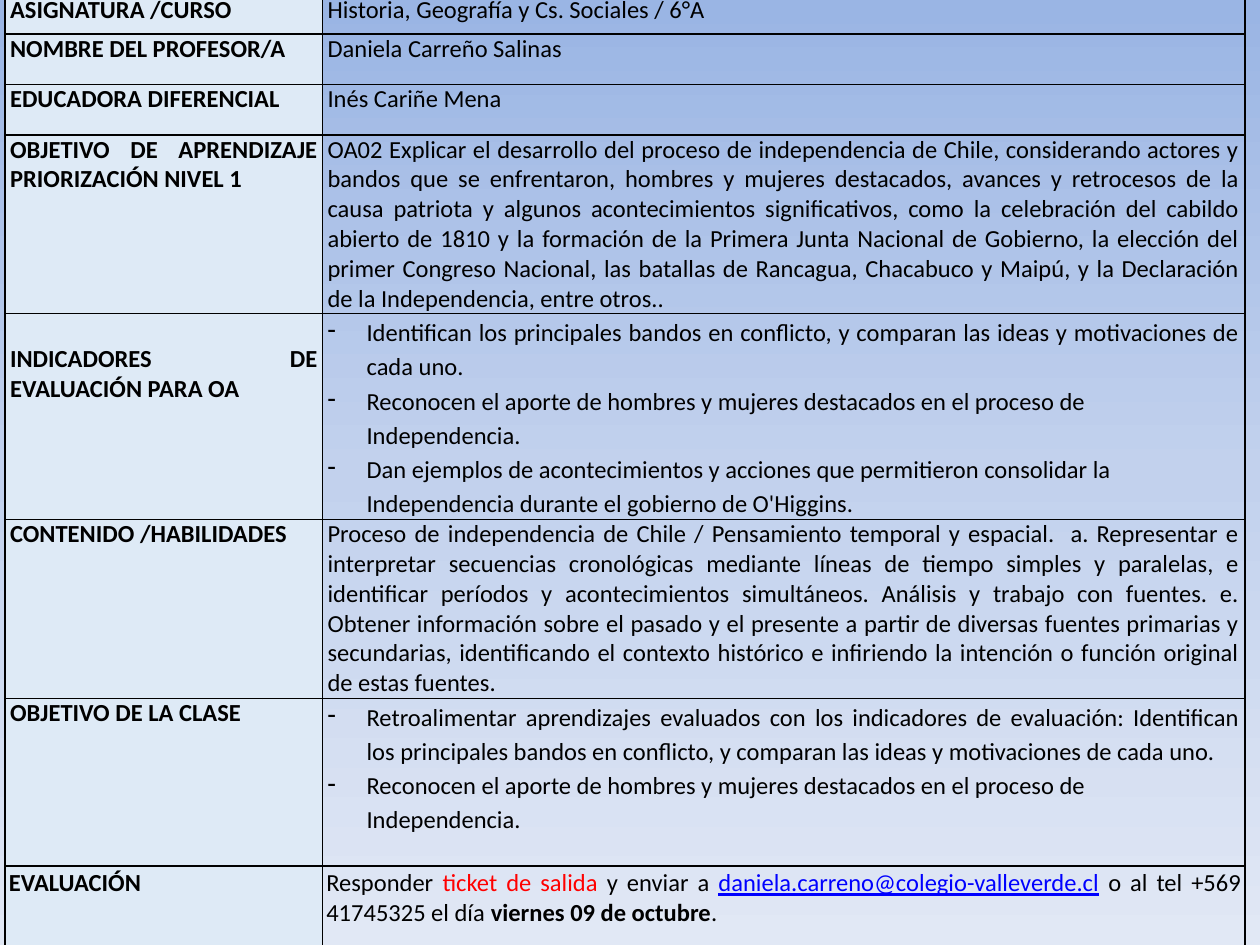
from copy import deepcopy

from lxml.etree import SubElement
from pptx import Presentation
from pptx.dml.color import RGBColor
from pptx.enum.text import PP_ALIGN
from pptx.oxml.ns import qn
from pptx.util import Inches, Pt

COLORS = {
    "text": "000000",
    "accent": "FF0000",
    "email": "0000FF",
    "label": "DEEAF6",
    "border": "000000",
}
BACKGROUND_STOPS = [(0, "9AB5E4"), (0.5, "C2D1ED"), (1, "E1E8F5")]
COLUMN_WIDTHS = [2.52, 7.32]
HERO_CONTRIBUTION = (
    "Reconocen el aporte de hombres y mujeres destacados en el proceso de Independencia."
)
SIDES_COMPARISON = (
    "Identifican los principales bandos en conflicto, y comparan las ideas y "
    "motivaciones de cada uno."
)
ROWS = [
    (0.31, "ASIGNATURA /CURSO", "Historia, Geografía y Cs. Sociales / 6°A"),
    (0.4, "NOMBRE DEL PROFESOR/A", "Daniela Carreño Salinas"),
    (0.4, "EDUCADORA DIFERENCIAL", "Inés Cariñe Mena"),
    (1.42, "OBJETIVO DE APRENDIZAJE PRIORIZACIÓN NIVEL 1",
     "OA02 Explicar el desarrollo del proceso de independencia de Chile, considerando "
     "actores y bandos que se enfrentaron, hombres y mujeres destacados, avances y "
     "retrocesos de la causa patriota y algunos acontecimientos significativos, como la "
     "celebración del cabildo abierto de 1810 y la formación de la Primera Junta Nacional "
     "de Gobierno, la elección del primer Congreso Nacional, las batallas de Rancagua, "
     "Chacabuco y Maipú, y la Declaración de la Independencia, entre otros.."),
    (1.63, "INDICADORES DE EVALUACIÓN PARA OA", [
        SIDES_COMPARISON,
        HERO_CONTRIBUTION,
        "Dan ejemplos de acontecimientos y acciones que permitieron consolidar la "
        "Independencia durante el gobierno de O'Higgins.",
    ]),
    (1.42, "CONTENIDO /HABILIDADES",
     "Proceso de independencia de Chile / Pensamiento temporal y espacial.  a. Representar "
     "e interpretar secuencias cronológicas mediante líneas de tiempo simples y paralelas, "
     "e identificar períodos y acontecimientos simultáneos. Análisis y trabajo con fuentes. "
     "e. Obtener información sobre el pasado y el presente a partir de diversas fuentes "
     "primarias y secundarias, identificando el contexto histórico e infiriendo la "
     "intención o función original de estas fuentes."),
    (1.33, "OBJETIVO DE LA CLASE", [
        "Retroalimentar aprendizajes evaluados con los indicadores de evaluación: "
        + SIDES_COMPARISON,
        HERO_CONTRIBUTION,
    ]),
    (0.64, "EVALUACIÓN", ""),
]
EVALUATION_RUNS = [
    ("Responder ", {}),
    ("ticket de salida ", {"color": "accent"}),
    ("y enviar a ", {}),
    ("daniela.carreno@colegio-valleverde.cl", {"color": "email", "underline": True}),
    (" o al tel +569 41745325 el día ", {}),
    ("viernes 09 de octubre", {"bold": True}),
    (".", {}),
]


def add_text(paragraph, text, color="text", bold=False, underline=False):
    """Add a formatted run to a paragraph."""
    run = paragraph.add_run()
    run.text = text
    run.font.name = "Calibri"
    run.font.size = Pt(14)
    run.font.bold = bold
    run.font.underline = underline
    run.font.color.rgb = RGBColor.from_string(COLORS[color])


def add_bullets(text_frame, items):
    """Write dashed list items, the first one justified."""
    for index, item in enumerate(items):
        paragraph = text_frame.add_paragraph() if index else text_frame.paragraphs[0]
        paragraph.alignment = PP_ALIGN.LEFT if index else PP_ALIGN.JUSTIFY
        paragraph.line_spacing = 1.15
        properties = paragraph._p.get_or_add_pPr()
        properties.set("marL", str(Inches(0.31)))
        properties.set("indent", str(-Inches(0.31)))
        SubElement(properties, qn("a:buChar"), char="-")
        add_text(paragraph, item)


def format_cell(cell, margin, top):
    """Set the margins and the four borders of a cell."""
    cell.margin_left = cell.margin_right = Inches(margin)
    cell.margin_top = Inches(top)
    cell.margin_bottom = Inches(0)
    properties = cell._tc.get_or_add_tcPr()
    for side in ("lnL", "lnR", "lnT", "lnB"):
        line = SubElement(properties, qn(f"a:{side}"), w=str(Pt(1)))
        fill = SubElement(line, qn("a:solidFill"))
        SubElement(fill, qn("a:srgbClr"), val=COLORS["border"])


def set_background(slide):
    """Give the slide a vertical gradient."""
    fill = slide.background.fill
    fill.gradient()
    fill.gradient_angle = 270
    stops = fill._fill._gradFill.gsLst
    stops.append(deepcopy(stops[-1]))
    for stop, (position, color) in zip(fill.gradient_stops, BACKGROUND_STOPS):
        stop.position = position
        stop.color.rgb = RGBColor.from_string(color)


def add_plan_table(slide):
    """Add the lesson plan table with its labels and contents."""
    frame = slide.shapes.add_table(
        len(ROWS), 2, Inches(0.04), Inches(-0.04), Inches(9.84), Inches(7.55)
    )
    table = frame.table
    table.first_row = table.horz_banding = False
    for column, width in zip(table.columns, COLUMN_WIDTHS):
        column.width = Inches(width)
    for index, (height, label, content) in enumerate(ROWS):
        table.rows[index].height = Inches(height)
        label_cell, content_cell = table.cell(index, 0), table.cell(index, 1)
        is_evaluation = label == "EVALUACIÓN"
        margin, top = (0.03, 0.02) if is_evaluation else (0.04, 0)
        format_cell(label_cell, margin, 0.24 if label.startswith("INDICADORES") else top)
        format_cell(content_cell, margin, top)
        label_cell.fill.solid()
        label_cell.fill.fore_color.rgb = RGBColor.from_string(COLORS["label"])
        content_cell.fill.background()
        for cell in (label_cell, content_cell):
            cell.text_frame.paragraphs[0].alignment = PP_ALIGN.JUSTIFY
        add_text(label_cell.text_frame.paragraphs[0], label, bold=True)
        if isinstance(content, list):
            add_bullets(content_cell.text_frame, content)
            continue
        for text, style in EVALUATION_RUNS if is_evaluation else [(content, {})]:
            add_text(content_cell.text_frame.paragraphs[0], text, **style)


def main():
    """Build and save the presentation."""
    presentation = Presentation()
    presentation.slide_width = Inches(10)
    presentation.slide_height = Inches(7.5)
    slide = presentation.slides.add_slide(presentation.slide_layouts[6])
    set_background(slide)
    add_plan_table(slide)
    presentation.save("out.pptx")


if __name__ == "__main__":
    main()
